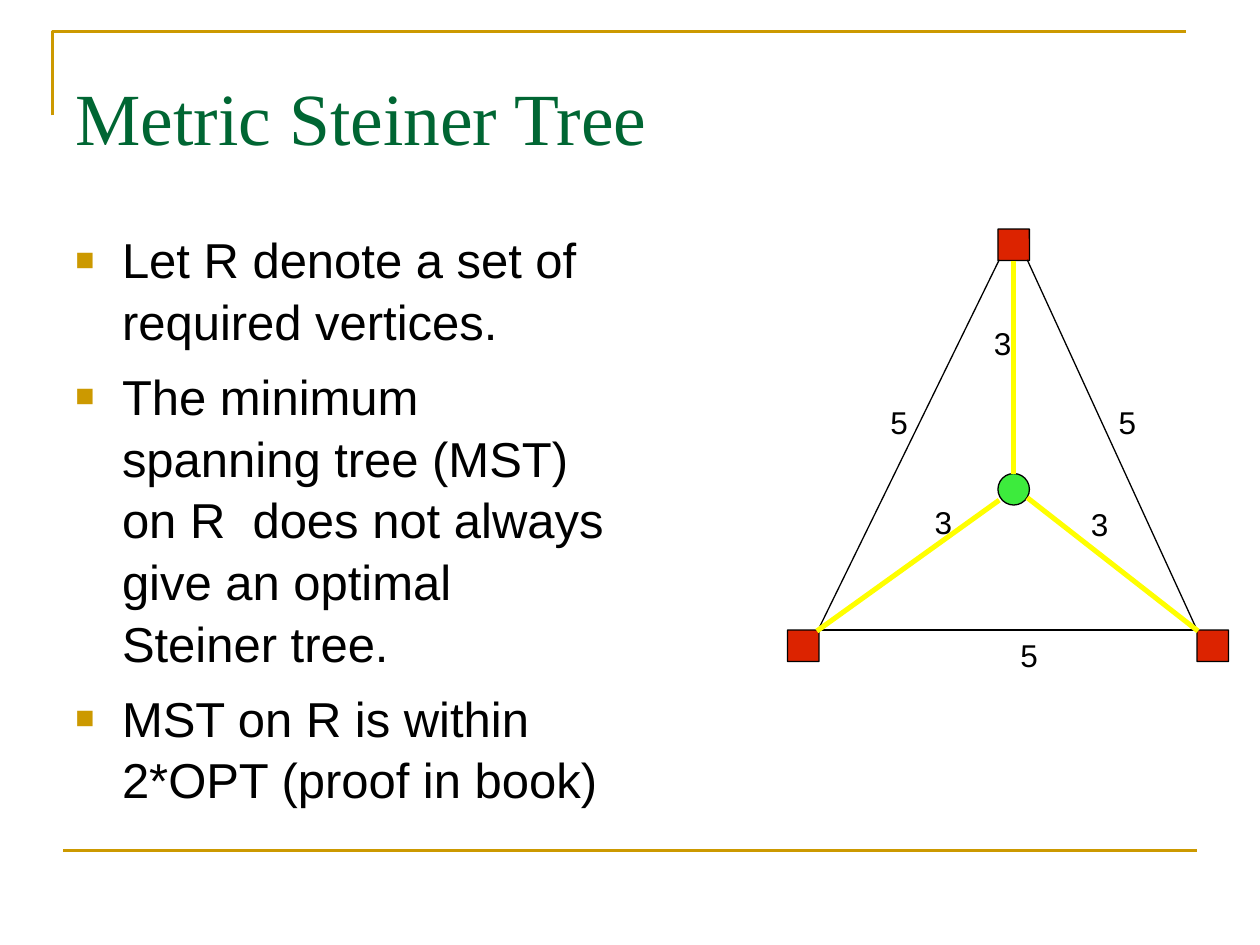
from lxml.etree import SubElement
from pptx import Presentation
from pptx.dml.color import RGBColor
from pptx.enum.shapes import MSO_CONNECTOR, MSO_SHAPE
from pptx.enum.text import MSO_ANCHOR
from pptx.oxml.ns import qn
from pptx.util import Pt

GOLD, BLACK, YELLOW = "CC9900", "000000", "FFFF00"
RED, GREEN = "DC2300", "3DEB3D"
SIDE = 18
TITLE = "Metric Steiner Tree"
POINTS = [
    "Let R denote a set of required vertices.",
    "The minimum spanning tree (MST) on R  does not always give an optimal Steiner tree.",
    "MST on R is within 2*OPT (proof in book)",
]
NODES = {
    "top": (570.24, 130.9, MSO_SHAPE.ROUNDED_RECTANGLE, RED),
    "left": (450, 360, MSO_SHAPE.ROUNDED_RECTANGLE, RED),
    "right": (684, 360, MSO_SHAPE.ROUNDED_RECTANGLE, RED),
    "hub": (570.24, 270.6, MSO_SHAPE.OVAL, GREEN),
}
EDGES = [
    (571, 148.5, 467.5, 360, BLACK, 0.75),
    (587, 148.5, 684, 360, BLACK, 0.75),
    (468, 360, 684, 360, BLACK, 0.75),
    (466.8, 360.6, 571, 285.8, YELLOW, 2.89),
    (579.24, 270.6, 579.24, 148.9, YELLOW, 2.89),
    (684.6, 360.6, 587, 284.4, YELLOW, 2.89),
]
SPOKE = 4
COSTS = [
    ("5", 576, 360), ("5", 632.2, 226.8), ("5", 501.8, 226.8),
    ("3", 527, 283.7), ("3", 616.3, 285.1), ("3", 560.9, 181.4),
]


def color(code):
    """Turn a hex string into a colour."""
    return RGBColor.from_string(code)


def add_line(slide, x1, y1, x2, y2, code, width):
    """Draw one straight line without a shadow."""
    line = slide.shapes.add_connector(
        MSO_CONNECTOR.STRAIGHT, Pt(x1), Pt(y1), Pt(x2), Pt(y2))
    line.line.color.rgb = color(code)
    line.line.width = Pt(width)
    SubElement(line._element.spPr, qn("a:effectLst"))
    return line


def add_frame(slide):
    """Draw the gold corner and the foot rule."""
    build = slide.shapes.build_freeform(Pt(30), Pt(66), scale=1.0)
    build.add_line_segments([(Pt(30), Pt(18)), (Pt(678), Pt(18))], close=False)
    corner = build.convert_to_shape()
    corner.shadow.inherit = False
    corner.fill.background()
    corner.line.color.rgb = color(GOLD)
    corner.line.width = Pt(1.5)
    add_line(slide, 36, 486, 684, 486, GOLD, 1.5)


def add_box(slide, x, y, w, h, wrap=True):
    """Add an empty text box and return its frame."""
    frame = slide.shapes.add_textbox(Pt(x), Pt(y), Pt(w), Pt(h)).text_frame
    frame.word_wrap = wrap
    return frame


def add_run(para, text, size, code=BLACK, face="Arial"):
    """Add one styled run to a paragraph."""
    run = para.add_run()
    run.text = text
    run.font.size = Pt(size)
    run.font.name = face
    run.font.color.rgb = color(code)


def set_bullet(para):
    """Give a paragraph a gold square bullet and a hanging indent."""
    props = para._p.get_or_add_pPr()
    props.set("marL", str(Pt(26.64)))
    props.set("indent", str(-Pt(26.64)))
    tint = SubElement(props, qn("a:buClr"))
    SubElement(tint, qn("a:srgbClr"), val=GOLD)
    SubElement(props, qn("a:buSzPct"), val="65000")
    SubElement(props, qn("a:buFont"), typeface="Arial")
    SubElement(props, qn("a:buChar"), char="■")


def add_text(slide):
    """Write the title and the bullet points."""
    head = add_box(slide, 36, 18, 648, 97.2)
    head.vertical_anchor = MSO_ANCHOR.MIDDLE
    add_run(head.paragraphs[0], TITLE, 42, "006633", "Times New Roman")
    body = add_box(slide, 36, 126, 317, 364.3)
    for i, text in enumerate(POINTS):
        para = body.add_paragraph() if i else body.paragraphs[0]
        para.line_spacing = 1.05
        para.space_before = Pt(7.5)
        set_bullet(para)
        add_run(para, text, 28)


def add_node(slide, x, y, kind, code):
    """Draw one vertex of the graph."""
    node = slide.shapes.add_shape(kind, Pt(x), Pt(y), Pt(SIDE), Pt(SIDE))
    if kind == MSO_SHAPE.ROUNDED_RECTANGLE:
        node.adjustments[0] = 0.01
    node.shadow.inherit = False
    node.fill.solid()
    node.fill.fore_color.rgb = color(code)
    node.line.color.rgb = color(BLACK)
    node.line.width = Pt(0.75)
    return node


def add_graph(slide):
    """Draw the vertices, edges and edge costs."""
    nodes = {name: add_node(slide, *spec_row) for name, spec_row in NODES.items()}
    edges = [add_line(slide, *edge) for edge in EDGES]
    edges[SPOKE].begin_connect(nodes["hub"], 0)
    edges[SPOKE].end_connect(nodes["top"], 2)
    for cost, x, y in COSTS:
        frame = add_box(slide, x, y, 24.5, 28.8, wrap=False)
        add_run(frame.paragraphs[0], cost, 18)


def main():
    """Build the slide and save it."""
    deck = Presentation()
    deck.slide_width, deck.slide_height = Pt(720), Pt(540)
    slide = deck.slides.add_slide(deck.slide_layouts[6])
    add_frame(slide)
    add_text(slide)
    add_graph(slide)
    deck.save("out.pptx")


if __name__ == "__main__":
    main()
